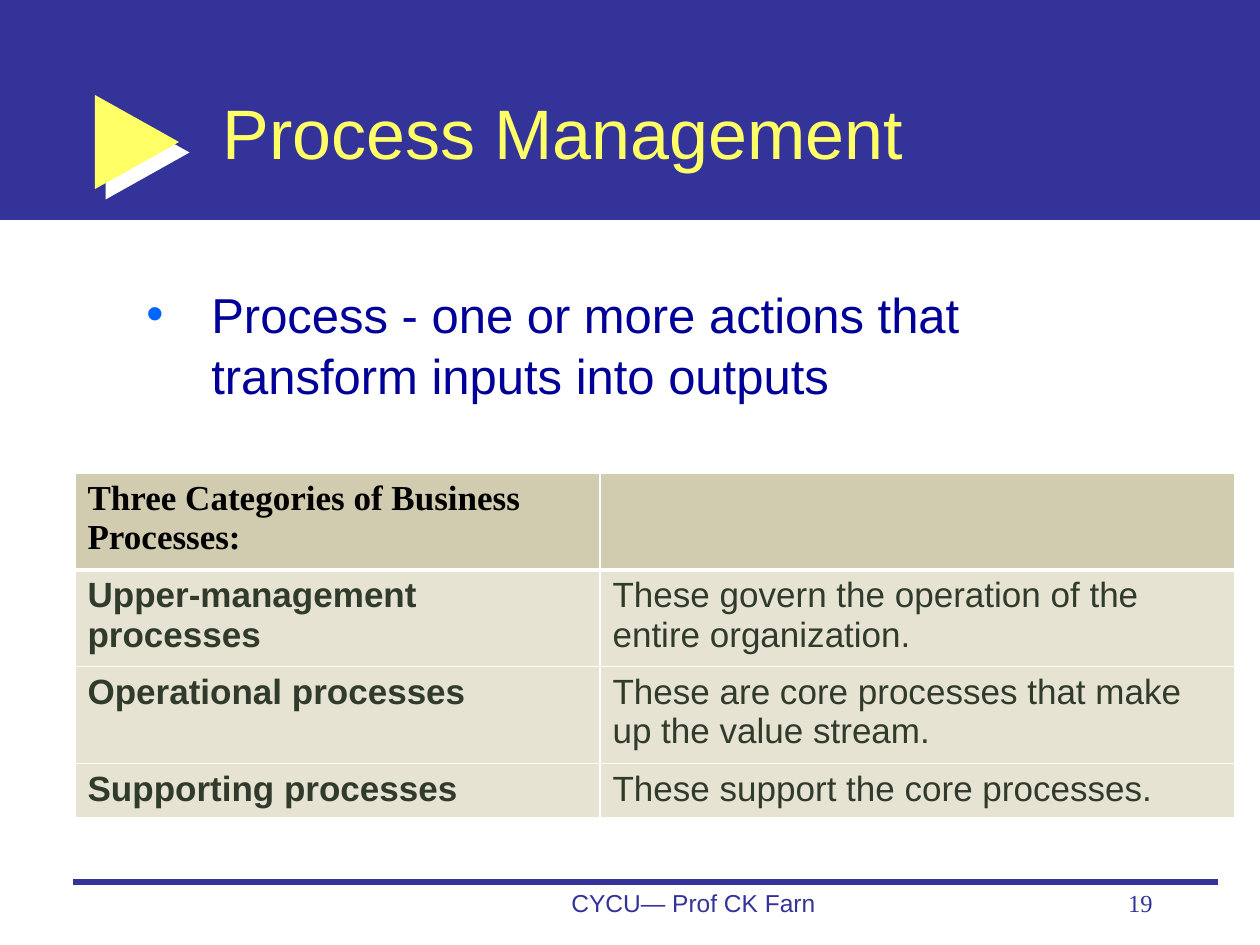
from lxml.etree import SubElement as Sub
from pptx import Presentation
from pptx.dml.color import RGBColor as Rgb
from pptx.enum.shapes import MSO_CONNECTOR as Conn, MSO_SHAPE as Shape
from pptx.enum.text import MSO_ANCHOR as Anchor, PP_ALIGN as Align
from pptx.oxml.ns import qn
from pptx.util import Emu, Pt

SCALE = 914400 / 126
HUES = {
    "band": "333399", "gold": "FFFF66", "white": "FFFFFF", "navy": "000099",
    "dot": "0066FF", "head": "D1CBAF", "row": "E6E3D2", "ink": "303B2C",
    "black": "000000",
}
SANS, SERIF = "Arial", "Times New Roman"
ROWS = [
    ("Three Categories of Business Processes:", ""),
    ("Upper-management processes",
     "These govern the operation of the entire organization."),
    ("Operational processes",
     "These are core processes that make up the value stream."),
    ("Supporting processes", "These support the core processes."),
]


def px(n):
    return Emu(round(n * SCALE))


def box(*nums):
    return [px(n) for n in nums]


def hue(name):
    return Rgb.from_string(HUES[name])


def tint(node, name):
    fill = Sub(node, qn("a:solidFill"))
    Sub(fill, qn("a:srgbClr"), val=HUES[name])


def write(para, text, size, color, face=SANS, bold=False):
    run = para.add_run()
    run.text = text
    font = run.font
    font.size, font.name, font.bold = Pt(size), face, bold
    font.color.rgb = hue(color)


def add_shape(slide, kind, area, color):
    shape = slide.shapes.add_shape(kind, *box(*area))
    shape.shadow.inherit = False
    shape.fill.solid()
    shape.fill.fore_color.rgb = hue(color)
    shape.line.fill.background()
    return shape


def add_arrow(slide):
    arrow = add_shape(slide, Shape.RIGHT_ARROW, (95, 95, 84, 94), "gold")
    arrow.adjustments[0], arrow.adjustments[1] = 0.38, 1
    # Hard white shadow, down and to the right
    effects = arrow._element.spPr.find(qn("a:effectLst"))
    shade = Sub(effects, qn("a:outerShdw"), dist=str(Pt(8.5)),
                dir="2700000", algn="ctr", rotWithShape="0")
    Sub(shade, qn("a:srgbClr"), val=HUES["white"])


def add_rule(slide):
    rule = slide.shapes.add_connector(Conn.STRAIGHT, *box(73, 882, 1218, 882))
    rule.line.color.rgb = hue("band")
    rule.line.width = Pt(3)
    Sub(rule._element.spPr, qn("a:effectLst"))


def add_title(slide, text):
    title = slide.shapes.title
    title.left, title.top, title.width, title.height = box(210, 53, 955, 158)
    frame = title.text_frame
    frame.word_wrap = True
    frame.vertical_anchor = Anchor.MIDDLE
    para = frame.paragraphs[0]
    para.alignment = Align.LEFT
    write(para, text, 40, "gold")


def add_text(slide, area, align=Align.LEFT):
    frame = slide.shapes.add_textbox(*box(*area)).text_frame
    frame.word_wrap = True
    para = frame.paragraphs[0]
    para.alignment = align
    return para


def add_point(slide, text):
    para = add_text(slide, (134, 275, 1012, 160))
    para.line_spacing = 1.05
    props = para._p.get_or_add_pPr()
    props.set("marL", str(px(65)))
    props.set("indent", str(px(-65)))
    Sub(Sub(props, qn("a:buClr")), qn("a:srgbClr"), val=HUES["dot"])
    Sub(props, qn("a:buFont"), typeface=SANS)
    Sub(props, qn("a:buChar"), char="•")
    write(para, text, 28, "navy")


def edge(cell, head):
    props = cell._tc.get_or_add_tcPr()
    for side in "LRTB":
        width = 3 if head and side == "B" else 1
        tint(Sub(props, qn("a:ln" + side), w=str(Pt(width))), "white")


def add_grid(slide):
    grid = slide.shapes.add_table(
        len(ROWS), 2, *box(75, 473, 1160, 343)).table
    grid.first_row = grid.horz_banding = False
    for col, width in zip(grid.columns, (525, 635)):
        col.width = px(width)
    for row, height in zip(grid.rows, (97, 96, 96, 54)):
        row.height = px(height)
    for i, texts in enumerate(ROWS):
        head = i == 0
        for j, text in enumerate(texts):
            cell = grid.cell(i, j)
            edge(cell, head)
            cell.fill.solid()
            cell.fill.fore_color.rgb = hue("head" if head else "row")
            if text:
                write(cell.text_frame.paragraphs[0], text, 20,
                      "black" if head else "ink",
                      SERIF if head else SANS, j == 0)


def main():
    deck = Presentation()
    deck.slide_width, deck.slide_height = box(1260, 945)
    slide = deck.slides.add_slide(deck.slide_layouts[5])

    # Header band, arrow and title
    add_shape(slide, Shape.RECTANGLE, (0, 0, 1260, 220), "band")
    add_arrow(slide)
    add_title(slide, "Process Management")
    tree = slide.shapes._spTree
    tree.append(slide.shapes.title._element)

    # Definition and categories
    add_point(slide, "Process - one or more actions that "
                     "transform inputs into outputs")
    add_grid(slide)

    # Footer
    add_rule(slide)
    write(add_text(slide, (494, 882, 399, 63), Align.CENTER),
          "CYCU— Prof CK Farn", 14, "band")
    write(add_text(slide, (903, 882, 262, 63), Align.RIGHT),
          "19", 14, "band", SERIF)
    deck.save("out.pptx")


if __name__ == "__main__":
    main()
